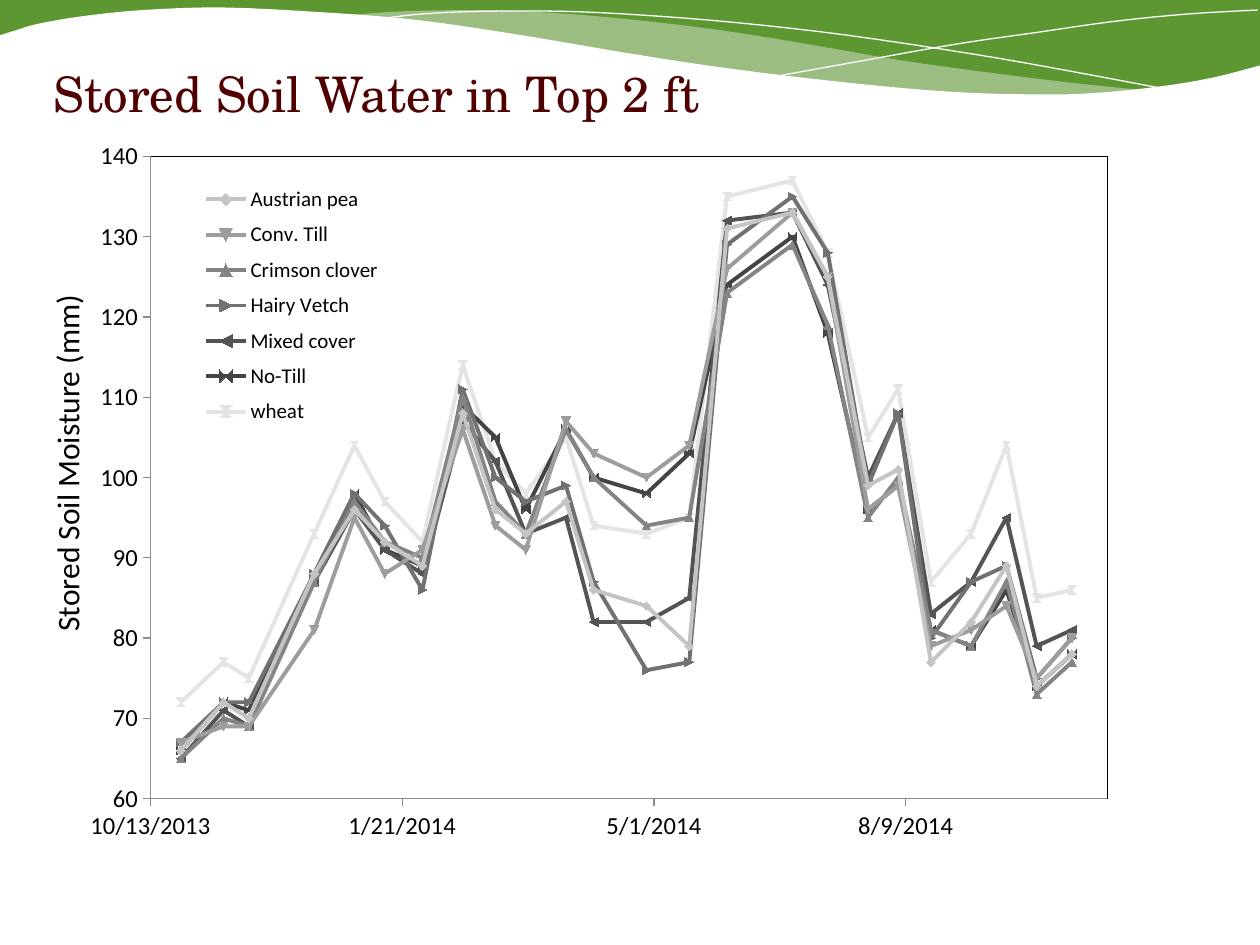
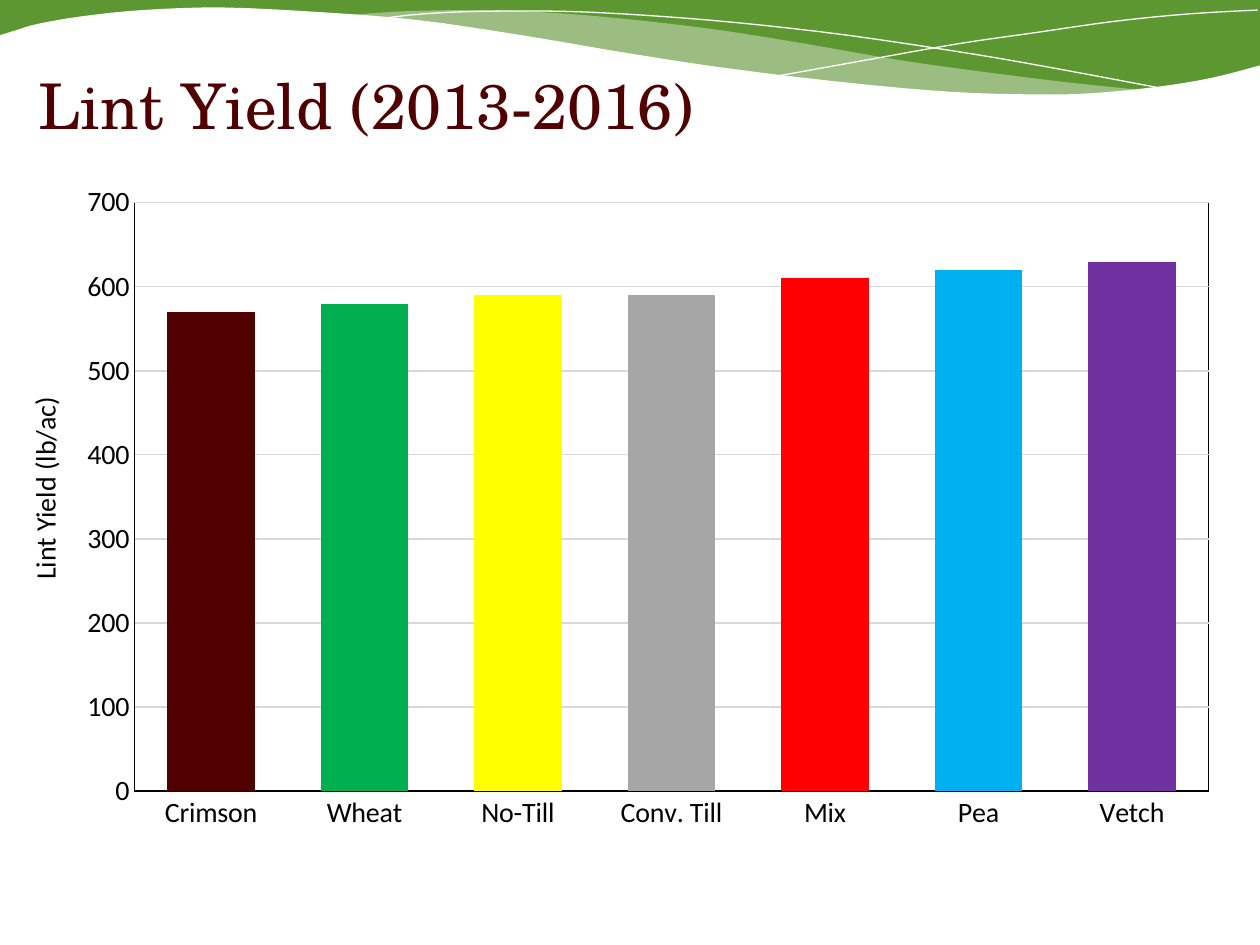
"""Build two soil-water and lint-yield chart slides under a shared green wave header."""
from dataclasses import dataclass

from lxml.etree import SubElement
from pptx import Presentation
from pptx.chart.data import CategoryChartData, XyChartData
from pptx.dml.color import RGBColor
from pptx.enum.chart import XL_CHART_TYPE as ChartType
from pptx.enum.chart import XL_LEGEND_POSITION as LegendPosition
from pptx.enum.chart import XL_TICK_MARK as TickMark
from pptx.enum.shapes import MSO_SHAPE as Shape
from pptx.enum.text import MSO_ANCHOR as Anchor
from pptx.enum.text import MSO_AUTO_SIZE as AutoSize
from pptx.oxml.ns import qn
from pptx.util import Inches, Pt


@dataclass(frozen=True)
class Theme:
    title_font: str = "TeX Gyre Schola"
    body_font: str = "Calibri"
    maroon: str = "500000"
    green: str = "5D9732"
    mist: str = "F8F8F8"
    white: str = "FFFFFF"
    black: str = "000000"
    axis_grey: str = "8B8B8B"
    grid_grey: str = "D9D9D9"
    legend_size: int = 12
    date_axis_size: int = 14
    yield_axis_size: int = 16


THEME = Theme()

MOISTURE_TITLE = ("Stored Soil Water in Top 2 ft", 28, (0.33, 0.34, 7.54, 0.8))
MOISTURE_LABEL = ("Stored Soil Moisture (mm)", 18, (-0.98, 3.4, 3.02, 0.4))
MOISTURE_BOX = (0.69, 1.06, 8.56, 5.69)
MOISTURE_PLOT = (0.059, 0.032, 0.887, 0.896)
MOISTURE_LEGEND = (0.1, 0.06, 0.18, 0.36)
FIRST_DATE, LAST_DATE = 41560, 41940
SAMPLE_DAYS = (12, 29, 39, 65, 81, 93, 108, 124, 137, 149, 165, 176,
               197, 214, 229, 255, 269, 285, 297, 310, 326, 340, 352, 366)
MOISTURE = [
    ("Austrian pea", "C4C4C4", (66, 72, 70, 88, 96, 92, 89, 108, 96, 93, 97, 86,
                                84, 79, 131, 133, 125, 99, 101, 77, 82, 89, 74, 78)),
    ("Conv. Till", "9D9D9D", (67, 69, 69, 81, 95, 88, 91, 106, 94, 91, 107, 103,
                              100, 104, 126, 133, 125, 96, 99, 79, 81, 84, 75, 80)),
    ("Crimson clover", "848484", (65, 70, 69, 87, 97, 92, 90, 110, 97, 93, 106, 100,
                                  94, 95, 123, 129, 119, 95, 100, 81, 79, 87, 73, 77)),
    ("Hairy Vetch", "717171", (67, 72, 72, 88, 98, 94, 86, 111, 100, 97, 99, 87,
                               76, 77, 129, 135, 128, 99, 108, 80, 87, 89, 75, 80)),
    ("Mixed cover", "545454", (65, 71, 69, 87, 96, 91, 88, 107, 102, 93, 95, 82,
                               82, 85, 132, 133, 124, 100, 108, 83, 87, 95, 79, 81)),
    ("No-Till", "444444", (66, 72, 71, 88, 98, 91, 89, 109, 105, 96, 106, 100,
                           98, 103, 124, 130, 118, 96, 99, 81, 79, 86, 74, 78)),
    ("wheat", "E4E4E4", (72, 77, 75, 93, 104, 97, 92, 114, 102, 98, 105, 94,
                         93, 95, 135, 137, 128, 105, 111, 87, 93, 104, 85, 86)),
]

YIELD_TITLE = ("Lint Yield (2013-2016)", 36, (0.21, 0.3, 9.57, 1.06))
YIELD_LABEL = ("Lint Yield (lb/ac)", 16, (-0.51, 3.65, 1.73, 0.37))
YIELD_BOX = (0.51, 1.37, 9.27, 5.33)
YIELD_PLOT = (0.06, 0.045, 0.92, 0.876)
YIELDS = [
    ("Crimson", 570, "500000"), ("Wheat", 580, "00B050"), ("No-Till", 590, "FFFF00"),
    ("Conv. Till", 590, "A6A6A6"), ("Mix", 610, "FF0000"), ("Pea", 620, "00B0F0"),
    ("Vetch", 630, "7030A0"),
]

RIBBON_TOP = [(9.12, 0.72), (8.53, 0.66), (7.88, 0.58), (7.16, 0.48), (6.35, 0.34),
              (5.72, 0.24), (5.15, 0.17), (4.63, 0.12), (4.16, 0.09), (3.74, 0.08),
              (3.2, 0.09), (2.76, 0.12)]
RIBBON_BOTTOM = [(2.76, 0.12), (3.34, 0.18), (4, 0.27), (4.9, 0.42), (5.69, 0.54),
                 (6.41, 0.63), (7.04, 0.7), (7.6, 0.74), (8.1, 0.76), (8.54, 0.76),
                 (9.12, 0.72)]
FALLING_LINE = [(3, 0.15), (3.36, 0.11), (3.82, 0.09), (4.47, 0.09), (5.1, 0.12),
                (5.85, 0.18), (6.73, 0.28), (7.73, 0.43), (8.47, 0.56), (9.27, 0.71)]
RISING_LINE = [(6.19, 0.6), (6.8, 0.49), (7.59, 0.35), (8.21, 0.26), (8.84, 0.17),
               (9.44, 0.11), (9.98, 0.08)]
PAGE_EDGE = [(10, 0.52), (9.61, 0.62), (9.18, 0.69), (8.67, 0.74), (8.23, 0.75),
             (7.56, 0.73), (6.76, 0.66), (5.83, 0.55), (5.03, 0.43), (4.14, 0.28),
             (3.32, 0.16), (2.59, 0.1), (1.78, 0.06), (1.14, 0.08), (0.65, 0.13),
             (0.3, 0.19), (0.13, 0.24), (0, 0.28)]
PAGE_CORNERS = [(0, 1.13), (10, 1.13)]


def rgb(color):
    return RGBColor.from_string(color)


def inches(box):
    return [Inches(value) for value in box]


def smooth_curve(points, steps=4):
    padded = [points[0], *points, points[-1]]
    curve = [points[0]]
    for a, b, c, d in zip(padded, padded[1:], padded[2:], padded[3:]):
        for step in range(1, steps + 1):
            t = step / steps
            curve.append(tuple(
                (2 * q + (r - p) * t + (2 * p - 5 * q + 4 * r - s) * t ** 2
                 + (3 * q - p - 3 * r + s) * t ** 3) / 2
                for p, q, r, s in zip(a, b, c, d)))
    return curve


def paint(shape, fill=None, line=None):
    shape.shadow.inherit = False
    if fill:
        shape.fill.solid()
        shape.fill.fore_color.rgb = rgb(fill)
    else:
        shape.fill.background()
    if line:
        shape.line.color.rgb = rgb(line)
        shape.line.width = Pt(0)
    else:
        shape.line.fill.background()


def add_outline(slide, points, close, **colors):
    start, *rest = [inches(point) for point in points]
    builder = slide.shapes.build_freeform(*start)
    builder.add_line_segments(rest, close=close)
    shape = builder.convert_to_shape()
    paint(shape, **colors)
    return shape


def add_wave_header(slide):
    band = slide.shapes.add_shape(Shape.RECTANGLE, *inches((0, 0, 10, 1.12)))
    paint(band, fill=THEME.green)
    ribbon = add_outline(slide, smooth_curve(RIBBON_TOP) + smooth_curve(RIBBON_BOTTOM)[1:],
                         True, fill=THEME.mist)
    color = ribbon.element.find(".//" + qn("a:srgbClr"))
    SubElement(color, qn("a:alpha"), val="40000")
    for line in (FALLING_LINE, RISING_LINE):
        add_outline(slide, smooth_curve(line), False, line=THEME.white)
    add_outline(slide, smooth_curve(PAGE_EDGE) + PAGE_CORNERS, True, fill=THEME.white)


def add_text(slide, text, size, box, font, color):
    shape = slide.shapes.add_textbox(*inches(box))
    run = shape.text_frame.paragraphs[0].add_run()
    run.text = text
    run.font.name, run.font.size = font, Pt(size)
    run.font.color.rgb = rgb(color)
    return shape


def add_title(slide, text, size, box):
    frame = add_text(slide, text, size, box, THEME.title_font, THEME.maroon).text_frame
    frame.word_wrap = True
    frame.vertical_anchor = Anchor.MIDDLE


def add_axis_label(slide, text, size, box):
    shape = add_text(slide, text, size, box, THEME.body_font, THEME.black)
    shape.rotation = 270
    shape.text_frame.word_wrap = False
    shape.text_frame.auto_size = AutoSize.SHAPE_TO_FIT_TEXT


def place_part(part, index, fractions, inner=False):
    for old in part.findall(qn("c:layout")):
        part.remove(old)
    layout = SubElement(part, qn("c:layout"))
    part.insert(index, layout)
    manual = SubElement(layout, qn("c:manualLayout"))
    if inner:
        SubElement(manual, qn("c:layoutTarget"), val="inner")
    for side in "xy":
        SubElement(manual, qn(f"c:{side}Mode"), val="edge")
    for side, value in zip("xywh", fractions):
        SubElement(manual, qn(f"c:{side}"), val=str(value))


def add_chart(slide, kind, box, data, plot_fractions):
    chart = slide.shapes.add_chart(kind, *inches(box), data).chart
    chart.has_title = False
    chart.has_legend = False
    chart.font.name, chart.font.size = THEME.body_font, Pt(10)
    chart.font.color.rgb = rgb(THEME.black)
    chart.plots[0].vary_by_categories = False
    plot_area = chart.element.find(".//" + qn("c:plotArea"))
    place_part(plot_area, 0, plot_fractions, inner=True)
    border = SubElement(SubElement(plot_area, qn("c:spPr")), qn("a:ln"), w=str(Pt(0.75)))
    SubElement(SubElement(border, qn("a:solidFill")), qn("a:srgbClr"), val=THEME.black)
    return chart


def style_axis(axis, size, line, tick, scale=None):
    axis.has_major_gridlines = False
    axis.major_tick_mark, axis.minor_tick_mark = tick, TickMark.NONE
    axis.tick_labels.font.size = Pt(size)
    axis.format.line.color.rgb = rgb(line)
    axis.format.line.width = Pt(0.75)
    if scale:
        axis.minimum_scale, axis.maximum_scale, axis.major_unit = scale


def add_moisture_chart(slide):
    data = XyChartData()
    for name, _, values in MOISTURE:
        series = data.add_series(name)
        for day, value in zip(SAMPLE_DAYS, values):
            series.add_data_point(FIRST_DATE + day, value)
    chart = add_chart(slide, ChartType.XY_SCATTER_LINES, MOISTURE_BOX, data, MOISTURE_PLOT)
    for axis, scale in ((chart.category_axis, (FIRST_DATE, LAST_DATE, 100)),
                        (chart.value_axis, (60, 140, 10))):
        style_axis(axis, THEME.date_axis_size, THEME.axis_grey, TickMark.OUTSIDE, scale)
    labels = chart.category_axis.tick_labels
    labels.number_format, labels.number_format_is_linked = "m/d/yyyy", False
    for series, (_, color, _) in zip(chart.plots[0].series, MOISTURE):
        series.smooth = False
        series.format.line.color.rgb = rgb(color)
        series.format.line.width = Pt(2.25)
        series.marker.format.fill.solid()
        series.marker.format.fill.fore_color.rgb = rgb(color)
        series.marker.format.line.color.rgb = rgb(color)
    chart.has_legend = True
    chart.legend.position = LegendPosition.RIGHT
    chart.legend.include_in_layout = False
    chart.legend.font.size = Pt(THEME.legend_size)
    place_part(chart.element.find(".//" + qn("c:legend")), 1, MOISTURE_LEGEND)


def add_yield_chart(slide):
    names, values, colors = zip(*YIELDS)
    data = CategoryChartData()
    data.categories = names
    data.add_series("Series 1", values)
    chart = add_chart(slide, ChartType.COLUMN_CLUSTERED, YIELD_BOX, data, YIELD_PLOT)
    for axis, scale in ((chart.category_axis, None), (chart.value_axis, (0, 700, 100))):
        style_axis(axis, THEME.yield_axis_size, THEME.black, TickMark.NONE, scale)
    grid = chart.value_axis.major_gridlines.format.line
    grid.color.rgb = rgb(THEME.grid_grey)
    grid.width = Pt(0.75)
    plot = chart.plots[0]
    plot.gap_width, plot.overlap = 75, -27
    for index, color in enumerate(colors):
        fill = plot.series[0].points[index].format.fill
        fill.solid()
        fill.fore_color.rgb = rgb(color)


def main():
    presentation = Presentation()
    presentation.slide_width, presentation.slide_height = Inches(10), Inches(7.5)
    for add_content, title, label in ((add_moisture_chart, MOISTURE_TITLE, MOISTURE_LABEL),
                                      (add_yield_chart, YIELD_TITLE, YIELD_LABEL)):
        slide = presentation.slides.add_slide(presentation.slide_layouts[6])
        add_wave_header(slide)
        add_content(slide)
        add_title(slide, *title)
        add_axis_label(slide, *label)
    presentation.save("out.pptx")


if __name__ == "__main__":
    main()
